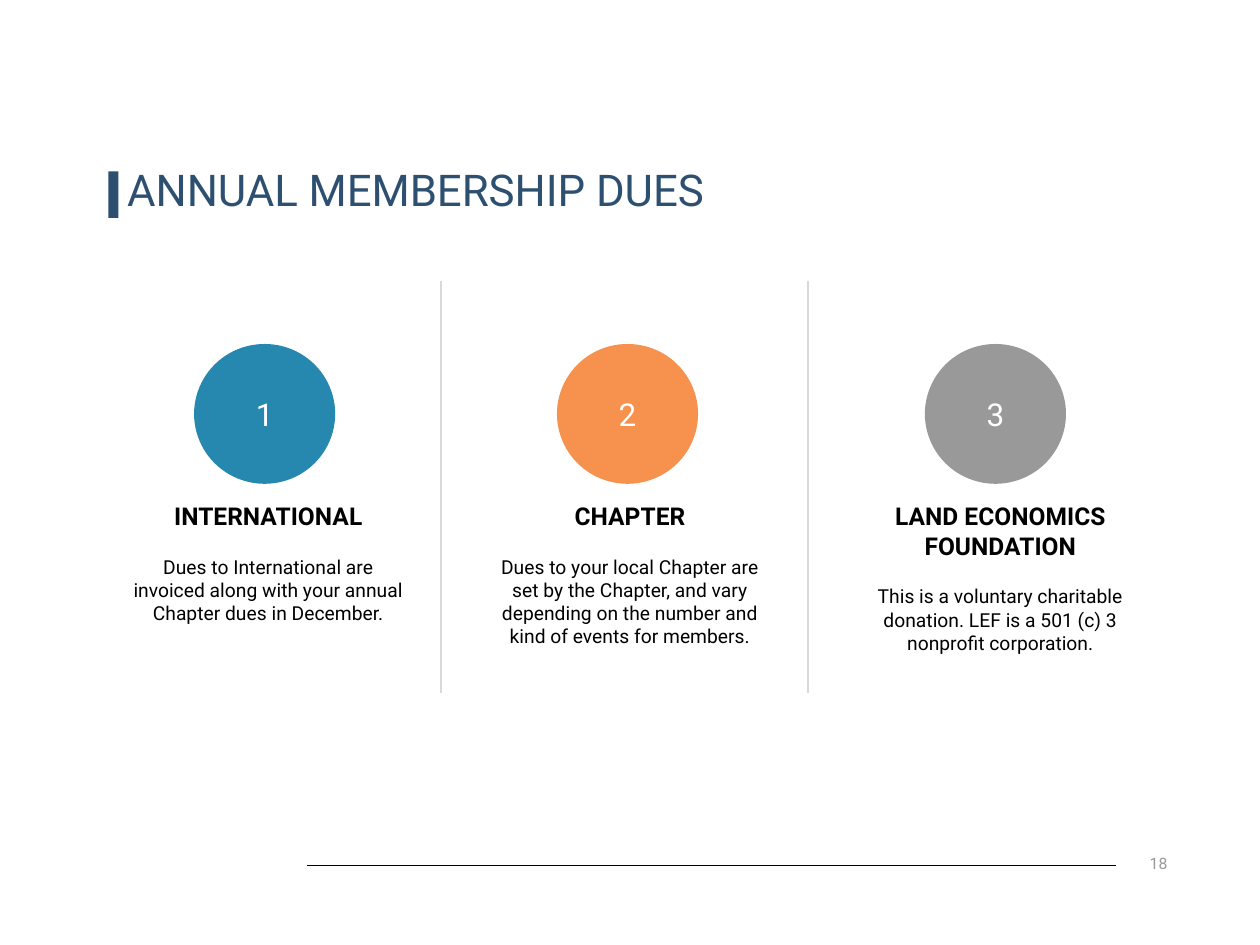
from pptx import Presentation
from pptx import util as u
from pptx.dml.color import RGBColor
from pptx.enum import shapes, text
from pptx.oxml.ns import qn
from lxml import etree

MID = text.MSO_ANCHOR.MIDDLE
CENTER = text.PP_ALIGN.CENTER
DUES = [
    (2.1, 2.13, "2688AE", ["INTERNATIONAL"],
     "Dues to International are invoiced along with your annual Chapter dues in December."),
    (4.98, 5, "F6914E", ["CHAPTER"],
     "Dues to your local Chapter are set by the Chapter, and vary depending on the number "
     "and kind of events for members."),
    (7.9, 7.94, "999999", ["LAND ECONOMICS", "FOUNDATION"],
     "This is a voluntary charitable donation. LEF is a 501 (c) 3 nonprofit corporation."),
]


def color(code):
    return RGBColor.from_string(code)


class Deck:
    """Holds the font and the current slide, and draws each kind of element."""

    def __init__(self, slide, face="Roboto"):
        self.slide = slide
        self.face = face

    def fill_text(self, frame, lines, align=None, anchor=text.MSO_ANCHOR.TOP, pad=(0.05, 0.02)):
        frame.word_wrap = True
        frame.vertical_anchor = anchor
        frame.margin_left = frame.margin_right = u.Inches(pad[0])
        frame.margin_top = frame.margin_bottom = u.Inches(pad[1])
        for i, (words, size, hue, bold, gap) in enumerate(lines):
            para = frame.add_paragraph() if i else frame.paragraphs[0]
            para.text = words
            para.alignment = align
            if gap:
                para.space_before = u.Pt(gap)
            font = para.font
            font.name, font.size, font.bold = self.face, u.Pt(size), bold
            font.color.rgb = color(hue)

    def label(self, box, lines, **look):
        item = self.slide.shapes.add_textbox(*map(u.Inches, box))
        self.fill_text(item.text_frame, lines, **look)

    def shape(self, kind, box, fill):
        item = self.slide.shapes.add_shape(kind, *map(u.Inches, box))
        item.shadow.inherit = False
        item.fill.solid()
        item.fill.fore_color.rgb = color(fill)
        item.line.fill.background()
        return item

    def disc(self, mid, fill, num):
        item = self.shape(shapes.MSO_SHAPE.OVAL, (mid - 0.56, 2.73, 1.12, 1.11), fill)
        self.fill_text(item.text_frame, [(num, 18, "FFFFFF", False, 0)], CENTER, MID)

    def line(self, start, end, hue, width):
        item = self.slide.shapes.add_connector(
            shapes.MSO_CONNECTOR.STRAIGHT, *map(u.Inches, start + end))
        item.line.color.rgb = color(hue)
        item.line.width = u.Pt(width)
        etree.SubElement(item._element.spPr, qn("a:effectLst"))


def main():
    show = Presentation()
    show.slide_width, show.slide_height = u.Inches(10), u.Inches(7.5)
    deck = Deck(show.slides.add_slide(show.slide_layouts[6]))

    deck.label((8.89, 6.75, 0.61, 0.2), [("18", 9, "999999", False, 0)],
               align=CENTER, anchor=MID, pad=(0.13, 0.07))
    deck.line((2.44, 6.87), (8.86, 6.87), "000000", 0.25)
    for x in (3.5, 6.41):
        deck.line((x, 2.23), (x, 5.5), "D9D9D9", 1)

    deck.label((0.96, 1.27, 8.36, 0.47), [("ANNUAL MEMBERSHIP DUES", 25, "2D4F70", False, 0)])
    deck.shape(shapes.MSO_SHAPE.RECTANGLE, (0.86, 1.36, 0.08, 0.37), "2D4F70")

    for num, (disc, mid, fill, heads, body) in enumerate(DUES, 1):
        deck.disc(disc, fill, str(num))
        lines = [(head, 14, "000000", True, 0) for head in heads]
        lines.append((body, 11, "000000", False, 14))
        deck.label((mid - 1.23, 3.93, 2.46, 1.28), lines, align=CENTER, pad=(0.1, 0.05))

    show.save("out.pptx")


if __name__ == "__main__":
    main()
